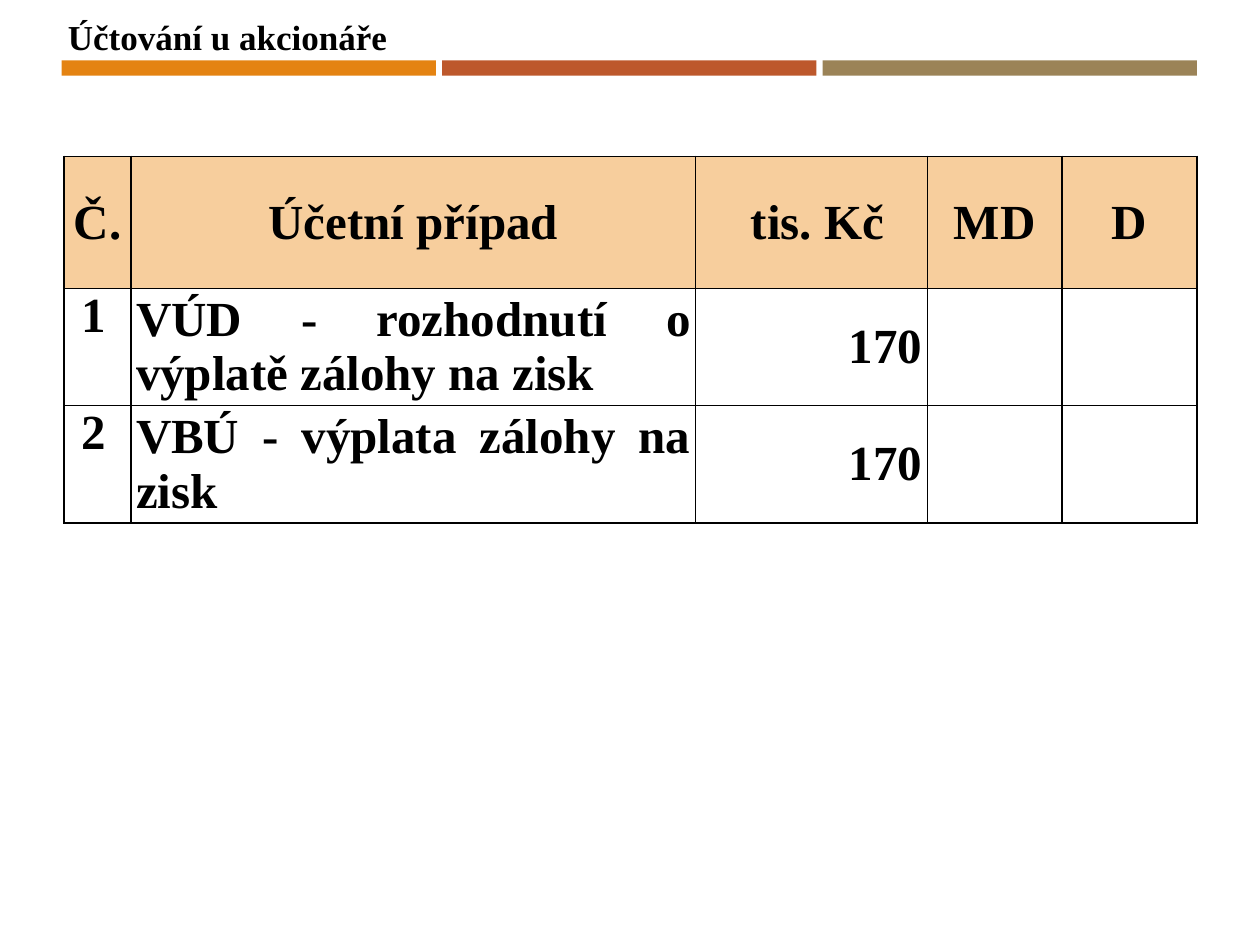
from lxml.etree import SubElement
from pptx import Presentation
from pptx.dml.color import RGBColor
from pptx.enum.shapes import MSO_SHAPE as Shape
from pptx.enum.text import MSO_ANCHOR as Anchor, MSO_AUTO_SIZE as AutoSize, PP_ALIGN as Align
from pptx.oxml.ns import qn
from pptx.util import Inches, Pt

FONT = "Times New Roman"
BLACK = RGBColor(0x00, 0x00, 0x00)
PEACH = RGBColor(0xF7, 0xCE, 0x9D)
BAR_COLORS = (
    RGBColor(0xE4, 0x83, 0x12),
    RGBColor(0xBD, 0x58, 0x2C),
    RGBColor(0x9B, 0x83, 0x57),
)

COLUMN_WIDTHS = (0.53, 4.48, 1.84, 1.07, 1.07)
ROW_HEIGHTS = (1.05, 0.93, 0.93)
ENTRIES = (
    ("Č.", "Účetní případ", " tis. Kč", "MD", "D"),
    (" 1", "VÚD - rozhodnutí o výplatě zálohy na zisk", "170", "", ""),
    (" 2", "VBÚ - výplata zálohy na zisk", "170", "", ""),
)
ENTRY_ALIGNMENTS = (Align.LEFT, Align.JUSTIFY, Align.RIGHT, Align.CENTER, Align.CENTER)


def write_bold(frame, text, size, alignment=Align.LEFT):
    """Put one bold black paragraph into a text frame."""
    frame.text = text
    paragraph = frame.paragraphs[0]
    paragraph.alignment = alignment
    for run in paragraph.runs:
        run.font.name = FONT
        run.font.size = Pt(size)
        run.font.bold = True
        run.font.color.rgb = BLACK


def add_title(slide, text):
    """Add the heading above the bars."""
    title = slide.shapes.add_textbox(Inches(0.44), Inches(0.07), Inches(2.76), Inches(0.44))
    title.text_frame.word_wrap = False
    title.text_frame.auto_size = AutoSize.SHAPE_TO_FIT_TEXT
    write_bold(title.text_frame, text, 20)


def add_bars(slide):
    """Add the row of equal coloured bars."""
    for index, color in enumerate(BAR_COLORS):
        left = Inches(0.49 + index * 3.02)
        bar = slide.shapes.add_shape(Shape.RECTANGLE, left, Inches(0.48), Inches(2.97), Inches(0.12))
        bar.shadow.inherit = False
        bar.fill.solid()
        bar.fill.fore_color.rgb = color
        bar.line.fill.background()


def add_borders(cell):
    """Draw thin black lines on all four sides of a cell."""
    properties = cell._tc.get_or_add_tcPr()
    for position, side in enumerate(("a:lnL", "a:lnR", "a:lnT", "a:lnB")):
        line = SubElement(properties, qn(side), w=str(Pt(1)))
        SubElement(SubElement(line, qn("a:solidFill")), qn("a:srgbClr"), val=str(BLACK))
        properties.insert(position, line)


def format_cell(cell, text, is_header, column):
    """Fill one table cell with its text, colour and borders."""
    cell.margin_left = cell.margin_right = Inches(0.04)
    cell.margin_top = cell.margin_bottom = 0
    is_number = column == 0 and not is_header
    cell.vertical_anchor = Anchor.TOP if is_number else Anchor.MIDDLE
    if is_header:
        cell.fill.solid()
        cell.fill.fore_color.rgb = PEACH
    else:
        cell.fill.background()
    add_borders(cell)
    alignment = Align.CENTER if is_header else ENTRY_ALIGNMENTS[column]
    write_bold(cell.text_frame, text, 28, alignment)


def add_ledger(slide):
    """Add the table of accounting entries."""
    frame = slide.shapes.add_table(
        len(ROW_HEIGHTS), len(COLUMN_WIDTHS), Inches(0.51), Inches(1.24),
        Inches(sum(COLUMN_WIDTHS)), Inches(sum(ROW_HEIGHTS)),
    )
    ledger = frame.table
    ledger.horz_banding = False
    for column, width in zip(ledger.columns, COLUMN_WIDTHS):
        column.width = Inches(width)
    for row, height in zip(ledger.rows, ROW_HEIGHTS):
        row.height = Inches(height)
    for row, entry in enumerate(ENTRIES):
        for column, text in enumerate(entry):
            format_cell(ledger.cell(row, column), text, row == 0, column)


def main():
    """Build the slide and save it."""
    deck = Presentation()
    deck.slide_width = Inches(10)
    deck.slide_height = Inches(7.5)
    slide = deck.slides.add_slide(deck.slide_layouts[6])
    add_bars(slide)
    add_ledger(slide)
    add_title(slide, "Účtování u akcionáře")
    deck.save("out.pptx")


if __name__ == "__main__":
    main()
